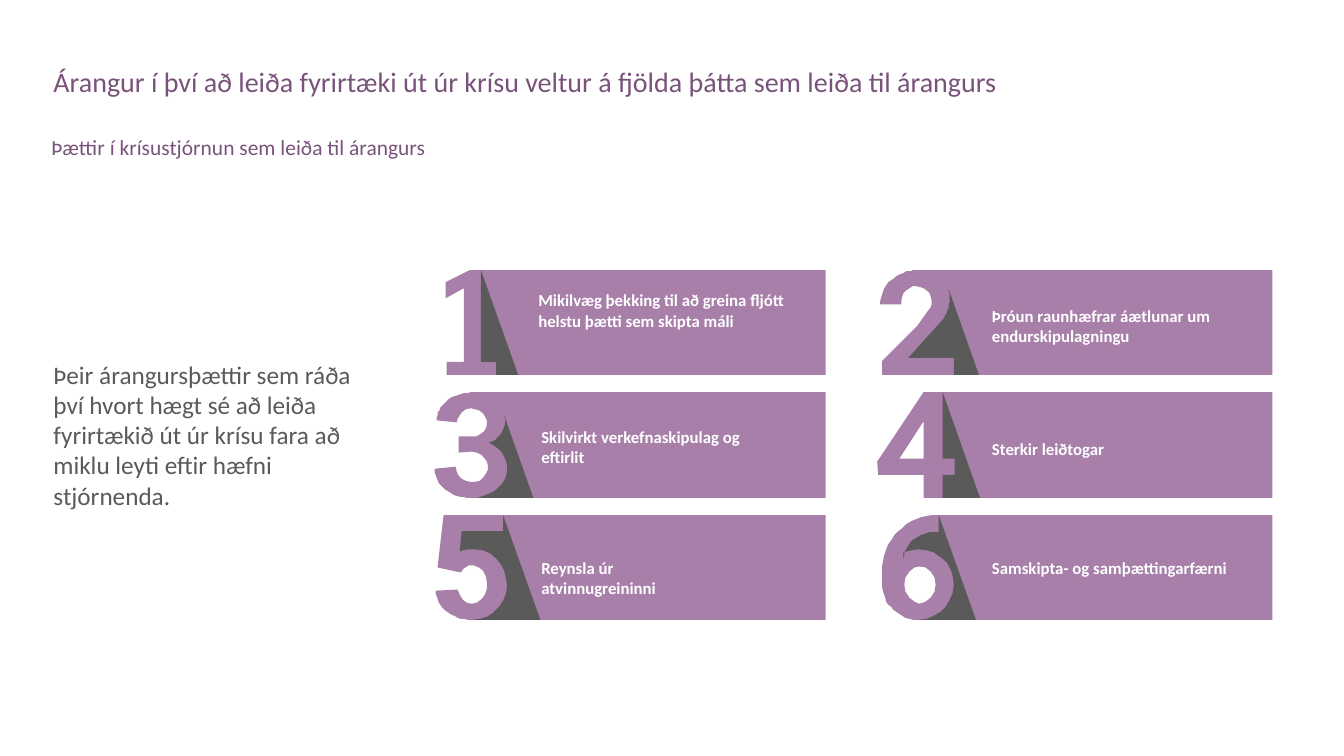
import math

from lxml import etree
from pptx import Presentation
from pptx import util as u
from pptx.dml.color import RGBColor
from pptx.enum import text
from pptx.oxml.ns import qn

Inches, Pt = u.Inches, u.Pt
FONT = "Calibri"
COLORS = {
    "heading": "79527B",
    "body": "595A59",
    "card": "A77FA9",
    "shadow": "595A59",
    "label": "FFFFFF",
}

# Card grid in hundredths of an inch
COLUMNS = (431, 874)
TOP, PITCH = 268, 121.4
CARD_W, CARD_H = 388, 104.5

# Outlines run from the card's bottom edge up to its top edge. A pair is a
# corner; six values are an arc: centre, radii, start and end in degrees.
NUMERALS = [
    [(12, CARD_H), (12, 91), (29, 91), (29, 18), (11, 28), (11, 12), (35, 0)],
    [(1, CARD_H), (1, 90), (36, 55), (35, 31, 15, 15, 40, -190),
     (-1, 34), (36, 34, 37, 34, 180, 270)],
    [(36, 76, 36, 28.5, 90, 180), (37, 74, 16, 15, 180, -90), (24, 60),
     (24, 44), (37, 30, 15, 14, 90, -180), (36, 28, 34, 28, 180, 270)],
    [(42, CARD_H), (42, 82), (-3, 82), (-4, 69), (42, 0)],
    [(36, 75, 35, 29, 90, 180), (37, 69, 15, 19, 165, -140), (3, 52), (9, 0)],
    [(39, 69, 38, 35.5, 90, 180), (56, 56, 55, 56, 180, 270)],
]
HOLES = {
    4: [(42, 66), (18, 66), (42, 29)],
    6: [(38.5, 69.5, 15.5, 18.5, 0, 360)],
}

# Shadows start at the apex, then the foot, then follow the numeral
SHADOWS = [
    [(46, 0), (83, CARD_H), (61, CARD_H), (61, 91), (46, 91)],
    [(67, 19), (97, CARD_H), (72, CARD_H), (72, 87), (27, 87),
     (34, 28, 34, 34, 35, -15)],
    [(69, 23), (98, CARD_H), (36, 75, 36, 29.5, 90, -60),
     (40, 28, 30, 25, 60, -10)],
    [(61, 0), (98, CARD_H), (61, CARD_H), (61, 82), (73, 82), (73, 66),
     (61, 66)],
    [(68, 0), (105, CARD_H), (37, 69, 35, 35, 90, -110), (27, 16), (68, 16)],
    [(57, 0), (94, CARD_H), (37, 69, 35, 35, 90, -115),
     (54, 46, 32, 29, 180, 270), (57, 17)],
]

# Label: left, top, width, number of lines, wording
LABELS = [
    (5.24, 2.83, 2.95, 2,
     "Mikilvæg þekking til að greina fljótt helstu þætti sem skipta máli"),
    (9.74, 2.98, 2.51, 2, "Þróun raunhæfrar áætlunar um endurskipulagningu"),
    (5.27, 4.18, 2.42, 2, "Skilvirkt verkefnaskipulag og eftirlit"),
    (9.74, 4.3, 2.02, 1, "Sterkir leiðtogar"),
    (5.27, 5.48, 1.51, 2, "Reynsla úr atvinnugreininni"),
    (9.74, 5.48, 2.64, 1, "Samskipta- og samþættingarfærni"),
]


def rgb(name):
    return RGBColor.from_string(COLORS[name])


def write(tf, words, size, color, bold=False):
    tf.text = words
    tf.word_wrap = True
    font = tf.paragraphs[0].runs[0].font
    font.name, font.size, font.bold = FONT, Pt(size), bold
    font.color.rgb = rgb(color)


def fill_placeholder(ph, box, words, size, color, spacing=1.0,
                     anchor=text.MSO_ANCHOR.TOP):
    ph.left, ph.top, ph.width, ph.height = map(Inches, box)
    tf = ph.text_frame
    write(tf, words, size, color)
    tf.auto_size = text.MSO_AUTO_SIZE.NONE
    tf.vertical_anchor = anchor
    p = tf.paragraphs[0]
    p.alignment = text.PP_ALIGN.LEFT
    p.line_spacing = spacing
    p.space_before = Pt(0)
    pPr = p._p.get_or_add_pPr()
    pPr.set("marL", "0")
    pPr.set("indent", "0")
    etree.SubElement(pPr, qn("a:buNone"))


def trace(outline, left, top, steps=16):
    """Turn corners and arcs into points on the slide."""
    points = []
    for part in outline:
        if len(part) == 2:
            points.append(part)
            continue
        cx, cy, rx, ry, start, end = part
        for i in range(steps + 1):
            angle = math.radians(start + (end - start) * i / steps)
            points.append((cx + rx * math.cos(angle),
                           cy + ry * math.sin(angle)))
    return [(left + x, top + y) for x, y in points]


def add_outline(s, name, contours, color):
    first, *holes = contours
    builder = s.shapes.build_freeform(*first[0], scale=Inches(0.01))
    builder.add_line_segments(first[1:], close=True)
    for hole in holes:
        builder.move_to(*hole[0])
        builder.add_line_segments(hole[1:], close=True)
    sp = builder.convert_to_shape()
    sp.name = name
    sp.shadow.inherit = False
    sp.fill.solid()
    sp.fill.fore_color.rgb = rgb(color)
    sp.line.fill.background()


def add_card(s, number, numeral, shadow):
    row, column = divmod(number - 1, len(COLUMNS))
    corner = COLUMNS[column], TOP + row * PITCH
    card = [(CARD_W, 0), (CARD_W, CARD_H)] + numeral
    contours = [trace(card, *corner)]
    if number in HOLES:
        contours.append(trace(HOLES[number], *corner))
    add_outline(s, f"Card {number}", contours, "card")
    add_outline(s, f"Shadow {number}", [trace(shadow, *corner)], "shadow")


def add_label(s, left, top, width, lines, words):
    height = 0.1 + 0.2 * lines
    box = s.shapes.add_textbox(*map(Inches, (left, top, width, height)))
    write(box.text_frame, words, 12, "label", bold=True)


def main():
    prs = Presentation()
    prs.slide_width, prs.slide_height = Inches(13.33), Inches(7.5)
    s = prs.slides.add_slide(prs.slide_layouts.get_by_name("Two Content"))
    title, subtitle, message = s.placeholders

    # Headings and message
    fill_placeholder(
        title, (0.43, 0.63, 12.54, 0.64),
        "Árangur í því að leiða fyrirtæki út úr krísu veltur á fjölda "
        "þátta sem leiða til árangurs", 20, "heading", 0.9)
    fill_placeholder(
        subtitle, (0.41, 1.35, 12.56, 0.28),
        "Þættir í krísustjórnun sem leiða til árangurs",
        15.3, "heading", 0.7)
    fill_placeholder(
        message, (0.43, 1.79, 3.49, 5.04),
        "Þeir árangursþættir sem ráða því hvort hægt sé að leiða "
        "fyrirtækið út úr krísu fara að miklu leyti eftir hæfni "
        "stjórnenda.", 18, "body", anchor=text.MSO_ANCHOR.MIDDLE)

    # Numbered cards with folded shadows
    for number, shapes in enumerate(zip(NUMERALS, SHADOWS), start=1):
        add_card(s, number, *shapes)

    # Card labels
    for label in LABELS:
        add_label(s, *label)

    prs.save("out.pptx")


if __name__ == "__main__":
    main()
